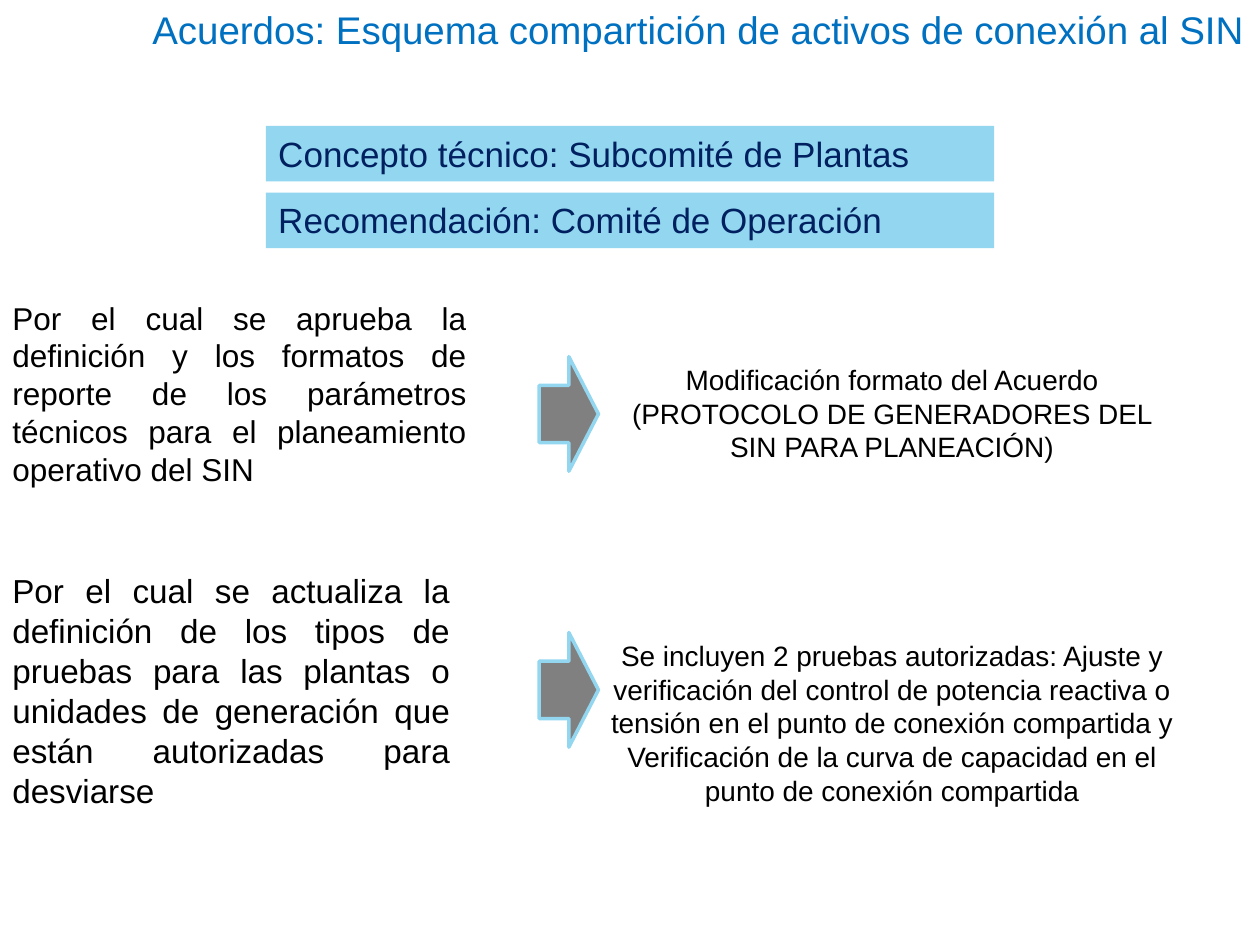
from dataclasses import dataclass

from pptx import Presentation
from pptx.dml.color import RGBColor
from pptx.enum.shapes import MSO_SHAPE
from pptx.enum.text import MSO_ANCHOR, MSO_AUTO_SIZE, PP_ALIGN
from pptx.util import Inches, Pt


@dataclass(frozen=True)
class Theme:
    """Colours, type sizes and font of the slide."""
    font: str = "Arial"
    title: str = "0070C0"
    body: str = "000000"
    banner_text: str = "002060"
    accent: str = "92D6F0"
    arrow: str = "808080"
    title_size: int = 22
    banner_size: int = 20
    outcome_size: int = 16
    outline: int = 2


class SlideBuilder:
    """Places elements on a grid of 100 columns by 75 rows."""

    def __init__(self, deck, theme):
        """Add a blank slide and size the grid to the deck."""
        self.theme = theme
        self.slide = deck.slides.add_slide(deck.slide_layouts[6])
        self.column = deck.slide_width / 100
        self.row = deck.slide_height / 75

    def place(self, left, top, width, height):
        """Turn grid units into slide lengths."""
        return (round(left * self.column), round(top * self.row),
                round(width * self.column), round(height * self.row))

    def add_wording(self, shape, wording, size, color, align):
        """Fill a shape with one styled paragraph."""
        frame = shape.text_frame
        frame.word_wrap = True
        frame.auto_size = MSO_AUTO_SIZE.SHAPE_TO_FIT_TEXT
        frame.vertical_anchor = MSO_ANCHOR.TOP
        paragraph = frame.paragraphs[0]
        paragraph.alignment = align
        run = paragraph.add_run()
        run.text = wording
        run.font.name = self.theme.font
        run.font.size = Pt(size)
        run.font.color.rgb = RGBColor.from_string(color)

    def text(self, cell, wording, size, align, color=None):
        """Add a plain text box."""
        box = self.slide.shapes.add_textbox(*self.place(*cell))
        self.add_wording(box, wording, size, color or self.theme.body, align)

    def filled(self, preset, cell, color):
        """Add a flat preset shape without shadow."""
        shape = self.slide.shapes.add_shape(preset, *self.place(*cell))
        shape.shadow.inherit = False
        shape.fill.solid()
        shape.fill.fore_color.rgb = RGBColor.from_string(color)
        return shape

    def banner(self, cell, wording):
        """Add a coloured band with text."""
        band = self.filled(MSO_SHAPE.RECTANGLE, cell, self.theme.accent)
        band.line.fill.background()
        self.add_wording(band, wording, self.theme.banner_size,
                         self.theme.banner_text, PP_ALIGN.JUSTIFY)

    def arrow(self, cell):
        """Add an outlined arrow pointing right."""
        arrow = self.filled(MSO_SHAPE.DOWN_ARROW, cell, self.theme.arrow)
        arrow.rotation = 270
        arrow.line.color.rgb = RGBColor.from_string(self.theme.accent)
        arrow.line.width = Pt(self.theme.outline)


BANNERS = ["Concepto técnico: Subcomité de Plantas",
           "Recomendación: Comité de Operación"]

AGREEMENTS = [
    ((0, 23.2, 38, 16.2), 18,
     "Por el cual se aprueba la definición y los formatos de reporte de los "
     "parámetros técnicos para el planeamiento operativo del SIN",
     9.1,
     "Modificación formato del Acuerdo (PROTOCOLO DE GENERADORES DEL SIN "
     "PARA PLANEACIÓN)"),
    ((0, 44.8, 36.7, 20.2), 19,
     "Por el cual se actualiza la definición de los tipos de pruebas para las "
     "plantas o unidades de generación que están autorizadas para desviarse",
     14.5,
     "Se incluyen 2 pruebas autorizadas: Ajuste y verificación del control de "
     "potencia reactiva o tensión en el punto de conexión compartida y "
     "Verificación de la curva de capacidad en el punto de conexión compartida"),
]


def main():
    """Build the slide of agreements and save it."""
    deck = Presentation()
    deck.slide_width, deck.slide_height = Inches(10), Inches(7.5)
    theme = Theme()
    page = SlideBuilder(deck, theme)

    page.text((10.5, 0, 89.2, 4.7),
              "Acuerdos: Esquema compartición de activos de conexión al SIN",
              theme.title_size, PP_ALIGN.RIGHT, theme.title)

    for index, wording in enumerate(BANNERS):
        page.banner((21.1, 10 + 5.3 * index, 57.8, 4.4), wording)

    for index, (cell, size, agreement, height, outcome) in enumerate(AGREEMENTS):
        offset = 21.9 * index
        page.text(cell, agreement, size, PP_ALIGN.JUSTIFY)
        page.arrow((40.6, 30.5 + offset, 9.1, 4.7))
        page.text((47.5, 28.3 + offset, 46.6, height), outcome,
                  theme.outcome_size, PP_ALIGN.CENTER)

    deck.save("out.pptx")


if __name__ == "__main__":
    main()
